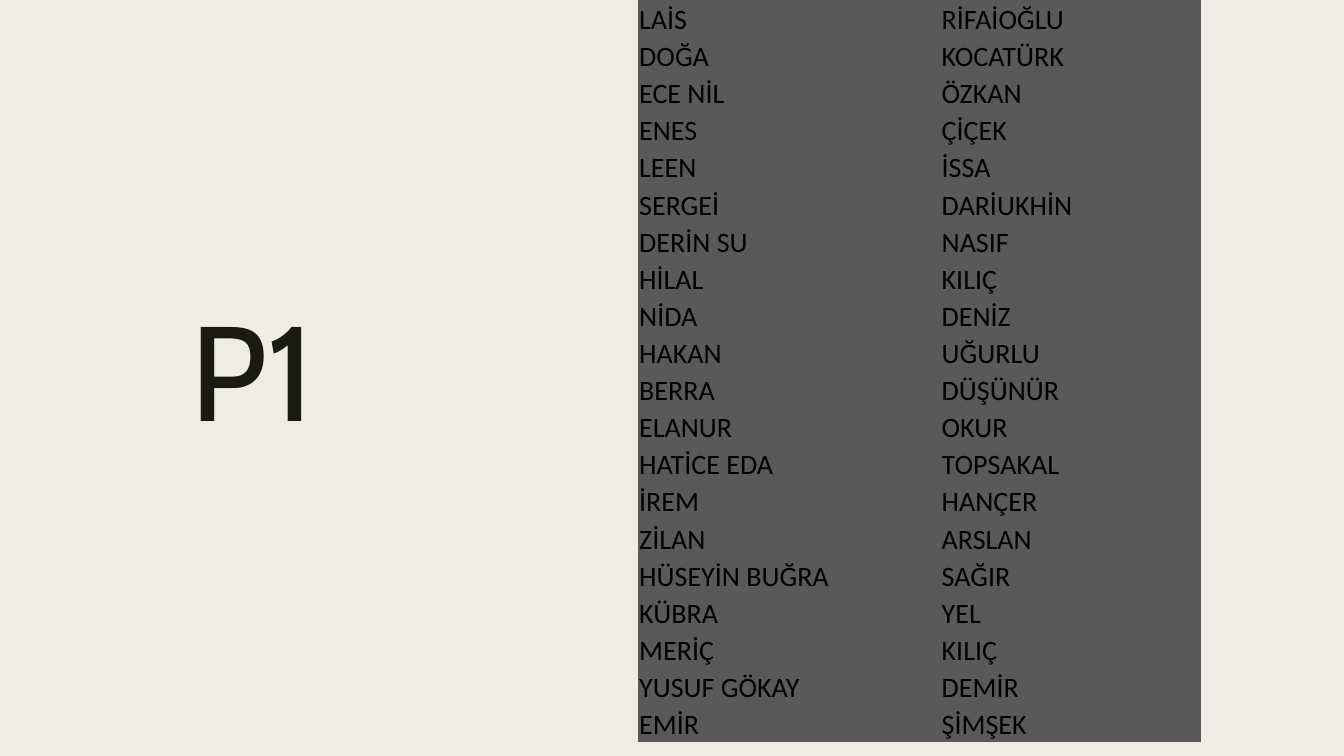
from dataclasses import dataclass

from pptx import Presentation, util as u
from pptx.dml.color import RGBColor
from pptx.enum import shapes, text
from pptx.oxml.ns import qn

TITLE = "P1"
NAMES = [
    ("LAİS", "RİFAİOĞLU"),
    ("DOĞA", "KOCATÜRK"),
    ("ECE NİL", "ÖZKAN"),
    ("ENES", "ÇİÇEK"),
    ("LEEN", "İSSA"),
    ("SERGEİ", "DARİUKHİN"),
    ("DERİN SU", "NASIF"),
    ("HİLAL", "KILIÇ"),
    ("NİDA", "DENİZ"),
    ("HAKAN", "UĞURLU"),
    ("BERRA", "DÜŞÜNÜR"),
    ("ELANUR", "OKUR"),
    ("HATİCE EDA", "TOPSAKAL"),
    ("İREM", "HANÇER"),
    ("ZİLAN", "ARSLAN"),
    ("HÜSEYİN BUĞRA", "SAĞIR"),
    ("KÜBRA", "YEL"),
    ("MERİÇ", "KILIÇ"),
    ("YUSUF GÖKAY", "DEMİR"),
    ("EMİR", "ŞİMŞEK"),
]
WIDTH, HEIGHT = u.Inches(13.33), u.Inches(7.5)
COLS = [u.Inches(3), u.Inches(2.58)]
LEFT, TALL = u.Inches(6.33), u.Inches(7.37)
NO_GRID = "{2D5ABB26-0587-4C30-8999-92F81FD0307C}"


@dataclass(frozen=True)
class Theme:
    cream: str = "EFEDE3"
    dark: str = "191B0E"
    gray: str = "595959"
    black: str = "000000"
    head: str = "Cabin"
    body: str = "Calibri"
    big: int = 96
    small: int = 20


LOOK = Theme()


def paint(fill, color):
    fill.solid()
    fill.fore_color.rgb = RGBColor.from_string(color)


def write(frame, words, face, size, color):
    frame.text = words
    font = frame.paragraphs[0].runs[0].font
    font.name, font.size = face, u.Pt(size)
    font.color.rgb = RGBColor.from_string(color)


def add_title(slide):
    edge = u.Inches(0.7)
    box = slide.shapes.add_textbox(edge, edge, u.Inches(3.61), HEIGHT - 2 * edge)
    frame = box.text_frame
    frame.word_wrap = True
    frame.vertical_anchor = text.MSO_ANCHOR.MIDDLE
    write(frame, TITLE, LOOK.head, LOOK.big, LOOK.dark)
    line = frame.paragraphs[0]
    line.alignment = text.PP_ALIGN.CENTER
    line.line_spacing = 0.89


def add_names(slide):
    holder = slide.shapes.add_table(len(NAMES), len(COLS), LEFT, 0, sum(COLS), TALL)
    table = holder.table
    table.first_row = table.horz_banding = False
    next(holder.element.iter(qn("a:tableStyleId"))).text = NO_GRID
    for col, width in zip(table.columns, COLS):
        col.width = width
    for row, pair in zip(table.rows, NAMES):
        row.height = TALL // len(NAMES)
        for cell, name in zip(row.cells, pair):
            paint(cell.fill, LOOK.gray)
            cell.margin_left = cell.margin_right = cell.margin_top = u.Inches(0.01)
            cell.margin_bottom = 0
            cell.vertical_anchor = text.MSO_ANCHOR.BOTTOM
            write(cell.text_frame, name, LOOK.body, LOOK.small, LOOK.black)


def main():
    deck = Presentation()
    deck.slide_width, deck.slide_height = WIDTH, HEIGHT
    slide = deck.slides.add_slide(deck.slide_layouts[6])
    paint(slide.background.fill, LOOK.cream)
    panel = slide.shapes.add_shape(shapes.MSO_SHAPE.RECTANGLE, 0, 0, WIDTH, HEIGHT)
    panel.shadow.inherit = False
    panel.line.fill.background()
    paint(panel.fill, LOOK.cream)
    add_title(slide)
    add_names(slide)
    deck.save("out.pptx")


if __name__ == "__main__":
    main()
